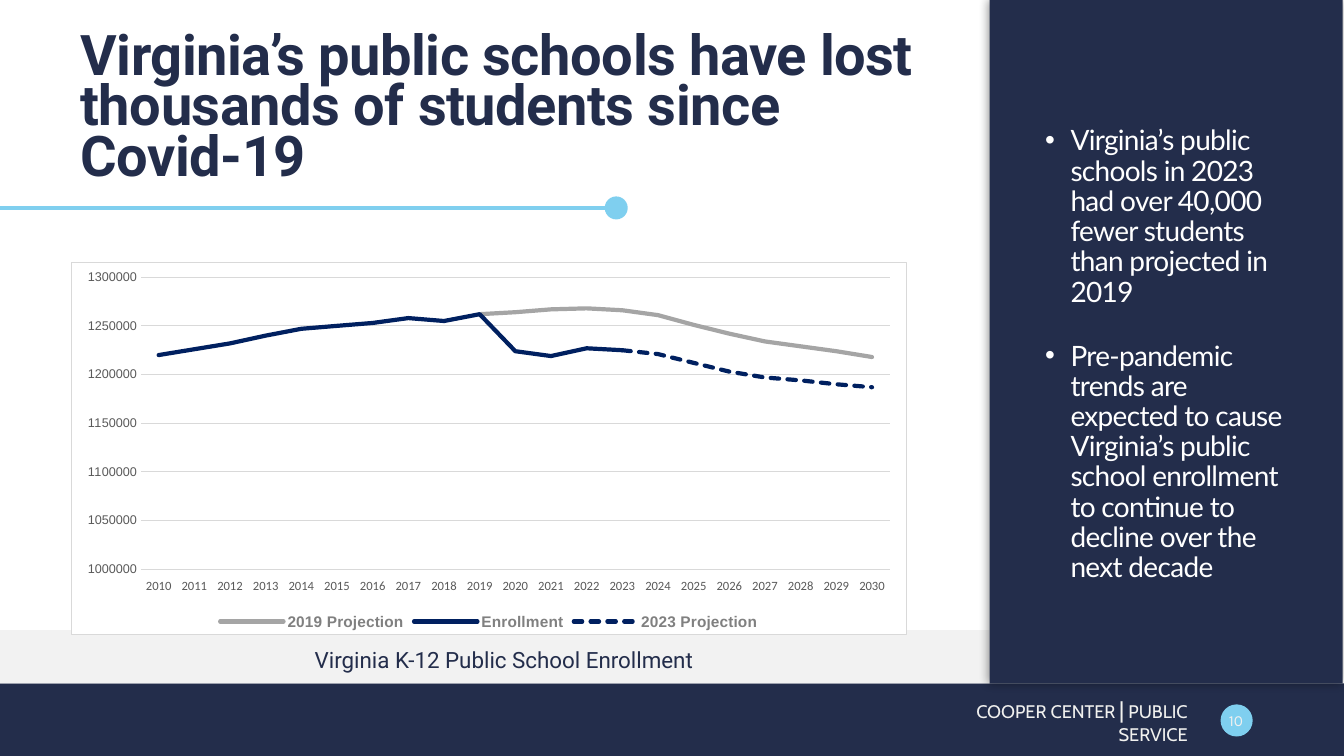
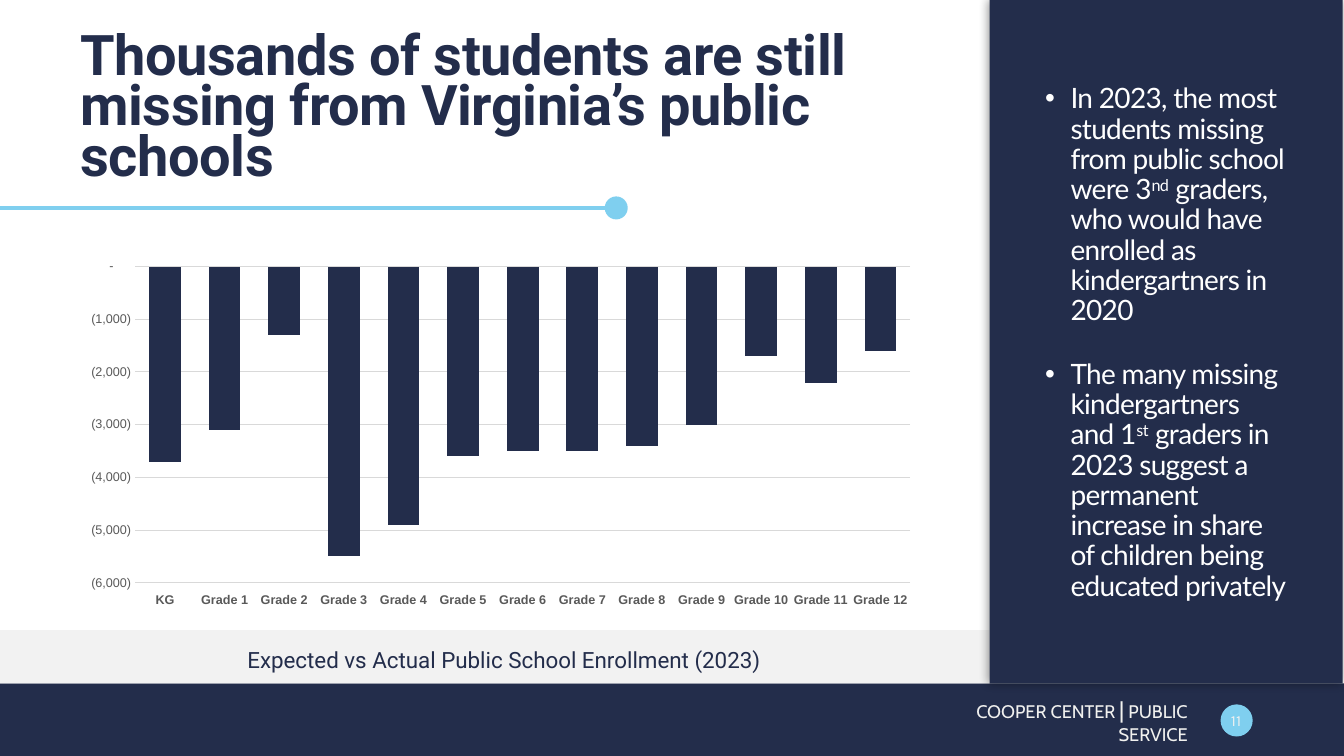
from dataclasses import dataclass
from pptx import Presentation
from pptx.chart.data import CategoryChartData
from pptx.dml.color import RGBColor
from pptx.enum.chart import XL_CHART_TYPE, XL_LEGEND_POSITION, XL_TICK_LABEL_POSITION, XL_TICK_MARK
from pptx.enum.dml import MSO_LINE
from pptx.enum.shapes import MSO_CONNECTOR, MSO_SHAPE
from pptx.enum.text import MSO_ANCHOR, PP_ALIGN
from pptx.oxml import parse_xml
from pptx.oxml.ns import nsdecls
from pptx.util import Cm, Pt


@dataclass(frozen=True)
class Theme:
    navy: str = "232D4B"
    sky: str = "7FCFEF"
    white: str = "FFFFFF"
    pale: str = "F2F2F2"
    cream: str = "F1F1EF"
    grid: str = "D9D9D9"
    label: str = "595959"
    key: str = "808080"
    past: str = "A5A5A5"
    ink: str = "002060"
    title: int = 40
    body: int = 20
    cap: int = 16
    foot: int = 13
    bar: int = 16
    page: int = 11
    tick: int = 9
    legend: int = 11


T = Theme()
LEFT, WIDE = 1.78, 21.84
ACCOUNT = '_(* #,##0_);_(* \\(#,##0\\);_(* "-"??_);_(@_)'


def put(item, **form):
    for name, value in form.items():
        setattr(item, name, value)


def type_in(font, face, size, color, bold=False):
    put(font, name=face, size=Pt(size), bold=bold)
    font.color.rgb = RGBColor.from_string(color)


def shape(slide, kind, box, color):
    item = slide.shapes.add_shape(kind, *map(Cm, box))
    item.shadow.inherit = False
    item.fill.solid()
    item.fill.fore_color.rgb = RGBColor.from_string(color)
    item.line.fill.background()
    return item


def cast(item):
    item._element.spPr.find("{*}effectLst").append(parse_xml(
        f'<a:outerShdw {nsdecls("a")} blurRad="88900" dist="12700" dir="10800000" rotWithShape="0">'
        '<a:srgbClr val="000000"><a:alpha val="40000"/></a:srgbClr></a:outerShdw>'))


def rule(slide, x, y, color):
    line = slide.shapes.add_connector(MSO_CONNECTOR.STRAIGHT, 0, Cm(y), Cm(x), Cm(y))
    line.line.width = Pt(2.25)
    line.line.color.rgb = RGBColor.from_string(color)
    line._element.spPr.append(parse_xml(f'<a:effectLst {nsdecls("a")}/>'))


def frame(slide, box, anchor=MSO_ANCHOR.TOP):
    text = slide.shapes.add_textbox(*map(Cm, box)).text_frame
    put(text, word_wrap=True, vertical_anchor=anchor)
    return text


def run(para, words, face, size, color, bold=False, **marks):
    part = para.add_run()
    part.text = words
    type_in(part.font, face, size, color, bold)
    for name, value in marks.items():
        part._r.get_or_add_rPr().set(name, str(value))


def dot(para):
    props = para._p.get_or_add_pPr()
    inset = Cm(0.64)
    props.set("marL", str(inset))
    props.set("indent", str(-inset))
    for tag in ('buFont {} typeface="Arial"', 'buChar {} char="•"'):
        props.append(parse_xml(f'<a:{tag.format(nsdecls("a"))}/>'))


def points(slide, top, items):
    text = frame(slide, (26.09, top, 6.57, 15.88 - top))
    for place, parts in enumerate(items):
        para = text.add_paragraph() if place else text.paragraphs[0]
        dot(para)
        put(para, line_spacing=0.9, space_after=Pt(24))
        for step, words in enumerate(parts):
            marks = {"baseline": 30000} if step % 2 else {}
            run(para, words, "Lato", T.body, T.white, spc=-50, **marks)


def base(deck, title, note, page):
    slide = deck.slides.add_slide(deck.slide_layouts[6])
    box, disc = MSO_SHAPE.RECTANGLE, MSO_SHAPE.OVAL
    shape(slide, box, (0, 17.22, 33.87, 1.83), T.navy)
    shape(slide, disc, (30.76, 17.75, 0.81, 0.81), T.sky)
    shape(slide, box, (0, 15.88, 24.94, 1.34), T.pale)
    cast(shape(slide, box, (24.94, 0, 8.9, 17.22), T.navy))
    shape(slide, disc, (15.24, 4.95, 0.58, 0.58), T.sky)
    rule(slide, 15.24, 5.24, T.sky)

    head = frame(slide, (LEFT, 1.52, WIDE, 3.3), MSO_ANCHOR.BOTTOM).paragraphs[0]
    head.line_spacing = 0.75
    run(head, title, "Roboto", T.title, T.navy, True, spc=-30)

    foot = frame(slide, (23.37, 17.65, 6.81, 1.02), MSO_ANCHOR.MIDDLE).paragraphs[0]
    foot.alignment = PP_ALIGN.RIGHT
    for words, size in (("COOPER CENTER ", T.foot), ("|", T.bar), (" PUBLIC SERVICE", T.foot)):
        run(foot, words, "Cabin", size, T.cream)

    count = frame(slide, (30.58, 17.7, 1.14, 0.89), MSO_ANCHOR.MIDDLE).paragraphs[0]
    count.alignment = PP_ALIGN.CENTER
    run(count, str(page), "Karla", T.page, T.cream)

    under = frame(slide, (LEFT, 16.23, WIDE, 0.66)).paragraphs[0]
    put(under, alignment=PP_ALIGN.CENTER, line_spacing=0.9)
    run(under, note, "Roboto", T.cap, T.navy)
    return slide


def area(chart, fill, edge):
    chart.element.find("{*}chart").addnext(parse_xml(
        f'<c:spPr {nsdecls("c", "a")}>{fill}<a:ln w="9525">{edge}</a:ln></c:spPr>'))


def solid(color):
    return f'<a:solidFill><a:srgbClr val="{color}"/></a:solidFill>'


def graph(slide, kind, box, cats, rows, low, high, unit, mask, face, bold):
    data = CategoryChartData()
    data.categories = cats
    for name, vals in rows:
        data.add_series(name, vals)
    chart = slide.shapes.add_chart(kind, *map(Cm, box), data).chart
    put(chart, has_title=False, has_legend=False)
    type_in(chart.font, "Calibri", 10, "000000")
    chart.plots[0].vary_by_categories = False
    cat, val = chart.category_axis, chart.value_axis
    for axis in (cat, val):
        put(axis, major_tick_mark=XL_TICK_MARK.NONE, minor_tick_mark=XL_TICK_MARK.NONE)
    put(cat, tick_label_position=XL_TICK_LABEL_POSITION.LOW, has_major_gridlines=False)
    put(val, minimum_scale=low, maximum_scale=high, major_unit=unit, has_major_gridlines=True)
    put(val.tick_labels, number_format=mask, number_format_is_linked=False)
    type_in(cat.tick_labels.font, face, T.tick, T.label, bold)
    type_in(val.tick_labels.font, "Arial", T.tick, T.label)
    for line in (cat.format.line, val.major_gridlines.format.line):
        line.width = Pt(0.75)
        line.color.rgb = RGBColor.from_string(T.grid)
    val.format.line.fill.background()
    return chart


def trend(slide):
    years = [str(year) for year in range(2010, 2031)]
    past = [1262000, 1264000, 1267000, 1268000, 1266000, 1261000,
            1251000, 1242000, 1234000, 1229000, 1224000, 1218000]
    real = [1220000, 1226000, 1232000, 1240000, 1247000, 1250000, 1253000,
            1258000, 1255000, 1262000, 1224000, 1219000, 1227000, 1225000]
    new = [1225000, 1221000, 1212000, 1203000, 1197000, 1194000, 1190000, 1187000]
    rows = [("2019 Projection", [None] * 9 + past),
            ("Enrollment", real + [None] * 7),
            ("2023 Projection", [None] * 13 + new)]
    chart = graph(slide, XL_CHART_TYPE.LINE, (LEFT, 6.6, 21.08, 9.4), years, rows,
                  1000000, 1300000, 50000, "General", "Calibri", False)
    area(chart, solid(T.white), solid(T.grid))
    chart.has_legend = True
    put(chart.legend, position=XL_LEGEND_POSITION.BOTTOM, include_in_layout=False)
    type_in(chart.legend.font, "Arial", T.legend, T.key, True)
    for row, color in zip(chart.plots[0].series, (T.past, T.ink, T.ink)):
        row.smooth = False
        row.format.line.width = Pt(3)
        row.format.line.color.rgb = RGBColor.from_string(color)
    row.format.line.dash_style = MSO_LINE.SQUARE_DOT
    for line in chart.element.xpath("//c:ser/c:spPr/a:ln"):
        line.set("cap", "rnd")


def gaps(slide):
    grades = ["KG"] + [f"Grade {grade}" for grade in range(1, 13)]
    vals = [-3700, -3100, -1300, -5500, -4900, -3600, -3500,
            -3500, -3400, -3000, -1700, -2200, -1600]
    chart = graph(slide, XL_CHART_TYPE.COLUMN_CLUSTERED, (LEFT, 6.35, 21.59, 9.14),
                  grades, [("Series 1", vals)], -6000, 0, 1000, ACCOUNT, "Arial", True)
    area(chart, "<a:noFill/>", "<a:noFill/>")
    plot = chart.plots[0]
    put(plot, gap_width=88, overlap=-27)
    row = plot.series[0]
    row.invert_if_negative = False
    row.format.fill.solid()
    row.format.fill.fore_color.rgb = RGBColor.from_string(T.navy)


def main():
    deck = Presentation()
    put(deck, slide_width=Cm(33.87), slide_height=Cm(19.05))

    slide = base(deck, "Virginia’s public schools have lost thousands of students since Covid-19",
                 "Virginia K-12 Public School Enrollment", 10)
    points(slide, 3.07, [
        ["Virginia’s public schools in 2023 had over 40,000 fewer students than projected in 2019"],
        ["Pre-pandemic trends are expected to cause Virginia’s public school enrollment "
         "to continue to decline over the next decade"]])
    trend(slide)

    slide = base(deck, "Thousands of students are still missing from Virginia’s public schools",
                 "Expected vs Actual Public School Enrollment (2023)", 11)
    points(slide, 2.01, [
        ["In 2023, the most students missing from public school were 3", "nd",
         " graders, who would have enrolled as kindergartners in 2020"],
        ["The many missing kindergartners and 1", "st",
         " graders in 2023 suggest a permanent increase in share "
         "of children being educated privately"]])
    gaps(slide)
    deck.save("out.pptx")


if __name__ == "__main__":
    main()
